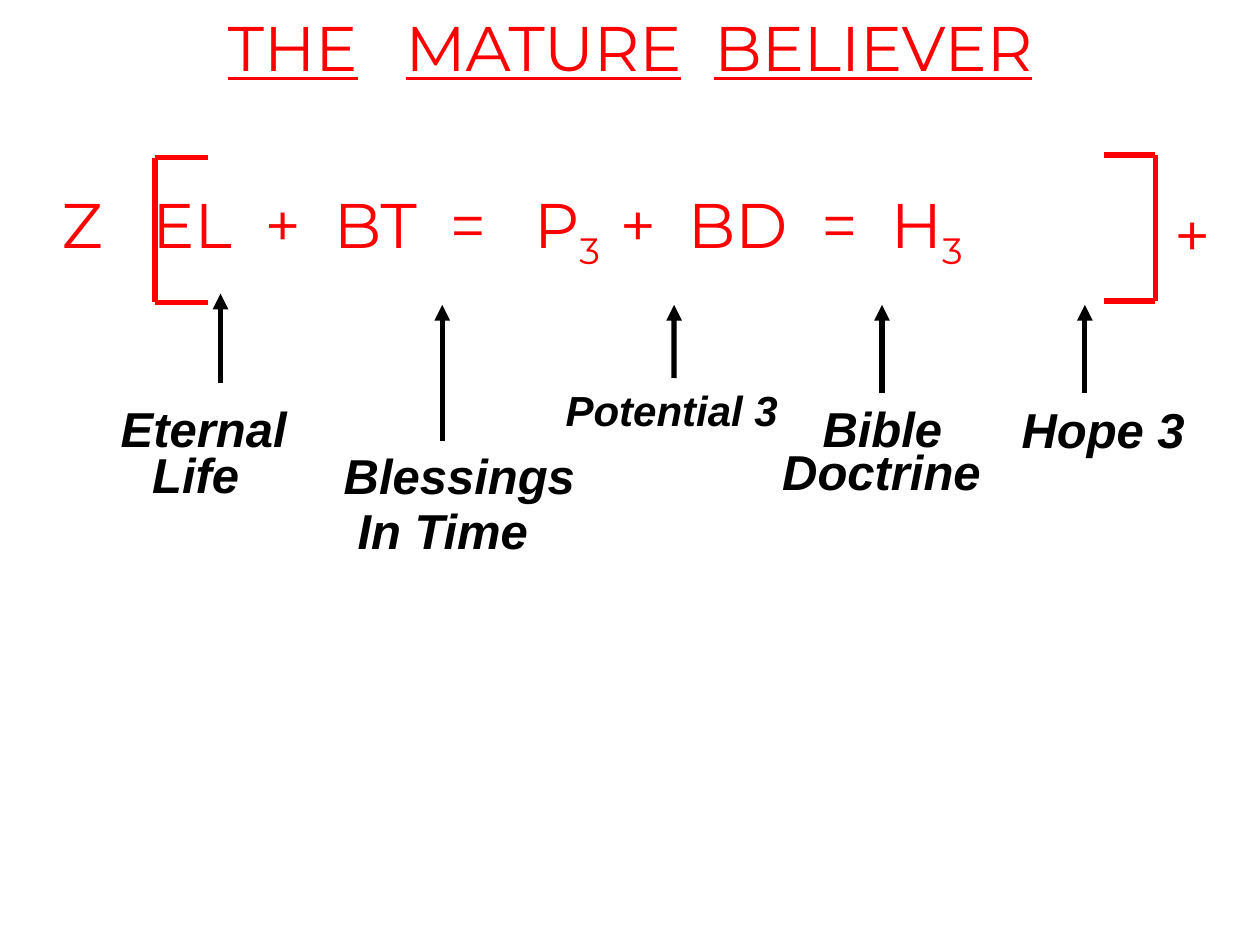
import pptx
import pptx.dml.color
import pptx.enum.shapes
import pptx.oxml.ns
import pptx.util
from lxml import etree

Inches = pptx.util.Inches
Pt = pptx.util.Pt
RED = "FF0000"
BLACK = "000000"


def color(value):
    return pptx.dml.color.RGBColor.from_string(value)


def add_element(parent, tag, **attributes):
    return etree.SubElement(parent, pptx.oxml.ns.qn(tag), **attributes)


def add_text_box(slide, box, text, inset=True):
    shape = slide.shapes.add_textbox(*map(Inches, box))
    frame = shape.text_frame
    frame.word_wrap = True
    if not inset:
        frame.margin_left = frame.margin_right = 0
        frame.margin_top = frame.margin_bottom = 0
    frame.text = text
    return shape


def style(run, font, size, value):
    run.font.name = font
    run.font.size = Pt(size)
    run.font.color.rgb = color(value)


def add_line(slide, start, end, value, arrow=False):
    connector = slide.shapes.add_connector(
        pptx.enum.shapes.MSO_CONNECTOR.STRAIGHT, *map(Inches, start + end))
    connector.line.color.rgb = color(value)
    connector.line.width = Pt(3)
    if arrow:
        add_element(connector.line._get_or_add_ln(), "a:tailEnd", type="triangle")
    add_element(connector._element.spPr, "a:effectLst")
    return connector


def add_tabbed_line(slide, box, columns):
    shape = add_text_box(slide, box, "", inset=False)
    paragraph = shape.text_frame.paragraphs[0]
    tabs = add_element(paragraph._p.get_or_add_pPr(), "a:tabLst")
    for position, _, _ in columns[1:]:
        add_element(tabs, "a:tab", pos=str(Inches(position - box[0])), algn="l")
    for index, (_, text, subscript) in enumerate(columns):
        run = paragraph.add_run()
        run.text = "\t" + text if index else text
        style(run, "Montserrat", 36, RED)
        if subscript:
            run = paragraph.add_run()
            run.text = subscript
            style(run, "Montserrat", 36, RED)
            run.font._element.set("baseline", "-25000")
    return paragraph


def add_title(slide, box):
    columns = [(1.81, "THE", ""), (3.22, "MATURE", ""), (5.67, "BELIEVER", "")]
    for run in add_tabbed_line(slide, box, columns).runs:
        run.font.underline = True


def add_bracket(slide, spine, tip, top, bottom):
    add_line(slide, (spine, top), (spine, bottom), RED)
    for y in (top, bottom):
        add_line(slide, (spine, y), (tip, y), RED)


def add_formula(slide, box):
    columns = [
        (0.49, "Z", ""), (1.21, "EL", ""), (2.1, "+", ""), (2.65, "BT", ""),
        (3.57, "=", ""), (4.24, "P", "3"), (4.92, "+", ""), (5.46, "BD", ""),
        (6.52, "=", ""), (7.07, "H", "3"),
    ]
    add_tabbed_line(slide, box, columns)
    add_bracket(slide, 1.23, 1.65, 1.25, 2.4)
    add_bracket(slide, 9.17, 8.76, 1.23, 2.39)
    plus = add_text_box(slide, (9.22, 1.5, 0.53, 0.7), "+")
    style(plus.text_frame.paragraphs[0].runs[0], "Montserrat", 36, RED)


def add_label(slide, box, text, size=28, spacing=None, indents=((0, 0),)):
    shape = add_text_box(slide, box, text)
    for index, paragraph in enumerate(shape.text_frame.paragraphs):
        margin, indent = indents[index]
        properties = paragraph._p.get_or_add_pPr()
        properties.set("marL", str(Inches(margin)))
        properties.set("indent", str(Inches(indent)))
        if spacing:
            paragraph.line_spacing = Pt(spacing)
        if index:
            paragraph.space_before = Pt(5.6)
        for run in paragraph.runs:
            style(run, "Arial", size, BLACK)
            run.font.bold = True
            run.font.italic = True
    return shape


def add_labels(slide):
    add_label(slide, (0.86, 3.22, 1.75, 0.82), "Eternal Life",
              spacing=26, indents=((0.25, -0.25),))
    add_label(slide, (2.42, 3.59, 2.44, 1), "Blessings\nIn Time",
              spacing=26, indents=((0.21, 0), (0.32, 0)))
    potential = add_label(slide, (4.39, 3, 1.92, 0.5), "Potential 3", size=24)
    add_label(slide, (6.11, 3.23, 2, 0.8), "Bible Doctrine",
              spacing=25, indents=((0, 0.32),))
    add_label(slide, (8.01, 3.12, 1.5, 0.57), "Hope 3")

    arrows = [(1.75, 3.04, 2.33), (3.51, 3.5, 2.42), (7, 3.12, 2.42), (8.61, 3.12, 2.42)]
    for x, bottom, top in arrows:
        add_line(slide, (x, bottom), (x, top), BLACK, arrow=True)
    add_line(slide, (5.35, 3), (5.35, 2.42), BLACK, arrow=True).begin_connect(potential, 0)


def main():
    presentation = pptx.Presentation()
    presentation.slide_width = Inches(10)
    presentation.slide_height = Inches(7.5)
    slide = presentation.slides.add_slide(presentation.slide_layouts[6])
    add_title(slide, (1.81, 0.07, 7, 0.62))
    add_formula(slide, (0.49, 1.47, 8.2, 0.62))
    add_labels(slide)
    presentation.save("out.pptx")


if __name__ == "__main__":
    main()
